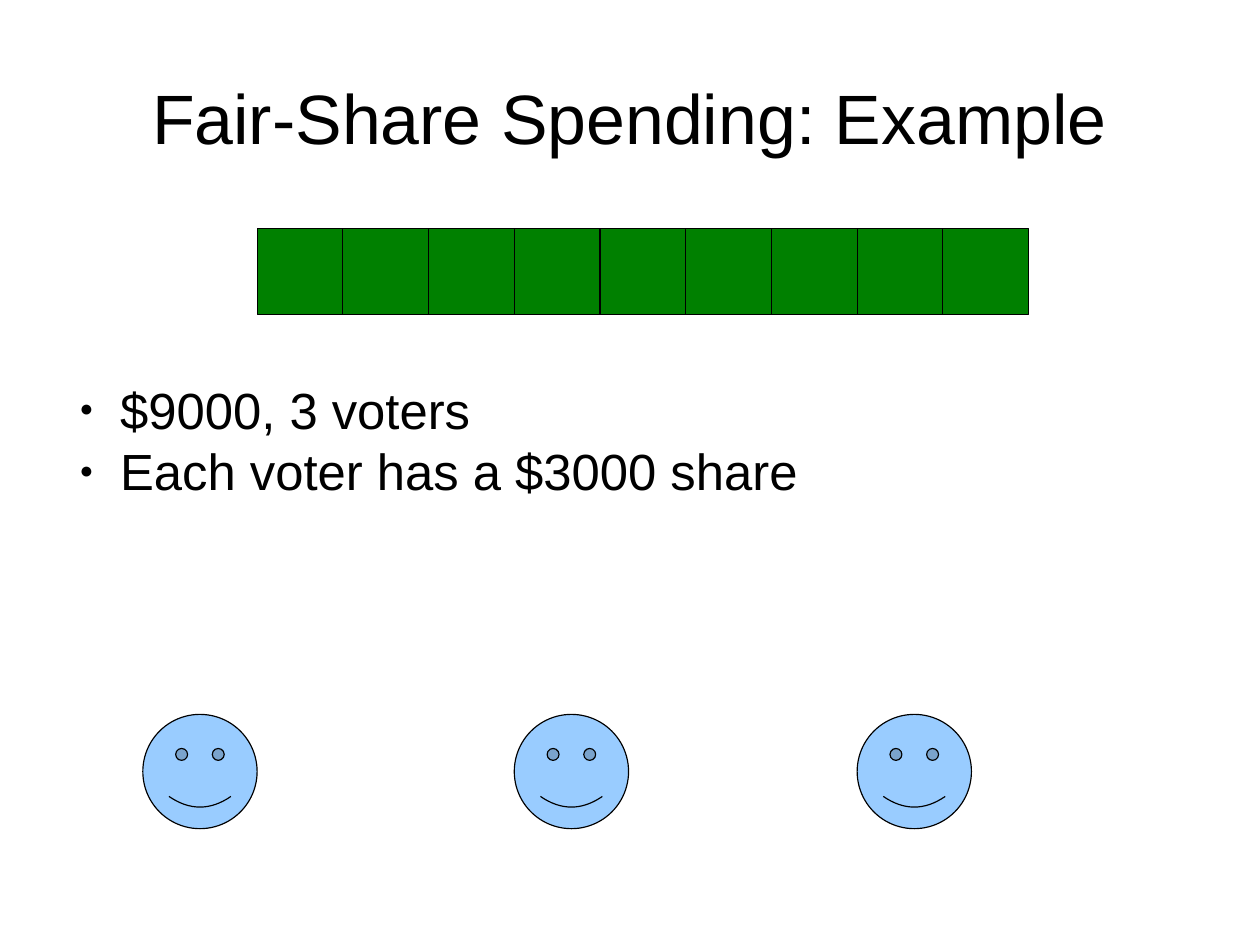
from lxml.etree import SubElement as Sub
from pptx import Presentation
from pptx.dml.color import RGBColor
from pptx.enum.shapes import MSO_SHAPE as Form
from pptx.enum.text import MSO_ANCHOR as Anchor, PP_ALIGN as Align
from pptx.oxml.ns import qn
from pptx.util import Pt

INK, MONEY, VOTER = "000000", "008000", "99CCFF"


def color(code):
    return RGBColor.from_string(code)


def write(para, text, size=32, font="Arial", ink=INK, align=Align.LEFT, after=0):
    para.alignment = align
    para.space_after = Pt(after)
    run = para.add_run()
    run.text = text
    run.font.size = Pt(size)
    run.font.name = font
    run.font.color.rgb = color(ink)


def bullet(para, indent=34, hang=25.5, scale=45, ink=INK):
    props = para._p.get_or_add_pPr()
    props.set("marL", str(Pt(indent)))
    props.set("indent", str(-Pt(hang)))
    tint = Sub(props, qn("a:buClr"))
    Sub(tint, qn("a:srgbClr"), val=ink)
    Sub(props, qn("a:buSzPct"), val=str(scale * 1000))
    Sub(props, qn("a:buFont"), typeface="Arial")
    Sub(props, qn("a:buChar"), char="●")


class Board:
    def __init__(self, slide, line=0.75):
        self.shapes = slide.shapes
        self.line = line

    def shape(self, form, left, top, side, fill):
        item = self.shapes.add_shape(form, Pt(left), Pt(top), Pt(side), Pt(side))
        item.shadow.inherit = False
        item.fill.solid()
        item.fill.fore_color.rgb = color(fill)
        item.line.color.rgb = color(INK)
        item.line.width = Pt(self.line)

    def frame(self, left, top, width, height, anchor=Anchor.TOP):
        box = self.shapes.add_textbox(Pt(left), Pt(top), Pt(width), Pt(height))
        frame = box.text_frame
        frame.word_wrap = True
        frame.vertical_anchor = anchor
        frame.margin_left = frame.margin_right = 0
        frame.margin_top = frame.margin_bottom = 0
        return frame

    def title(self, text, *area):
        frame = self.frame(*area, anchor=Anchor.MIDDLE)
        write(frame.paragraphs[0], text, size=44, align=Align.CENTER)

    def points(self, lines, *area):
        frame = self.frame(*area)
        for i, text in enumerate(lines):
            para = frame.add_paragraph() if i else frame.paragraphs[0]
            write(para, text, after=0.3)
            bullet(para)


def main():
    deck = Presentation()
    deck.slide_width, deck.slide_height = Pt(793.75), Pt(595.25)
    board = Board(deck.slides.add_slide(deck.slide_layouts[6]))

    # Voters
    for left in (90, 324, 540):
        board.shape(Form.SMILEY_FACE, left, 450, 72, VOTER)

    # Budget: one square per $1000
    side = 54
    for i in range(9):
        board.shape(Form.RECTANGLE, 162 + i * side, 144, side, MONEY)

    # Text
    board.title("Fair-Share Spending: Example", 39.7, 23.8, 714.3, 99.4)
    board.points(("$9000, 3 voters", "Each voter has a $3000 share"),
                 41.7, 238.3, 714.3, 92.9)

    deck.save("out.pptx")


if __name__ == "__main__":
    main()
